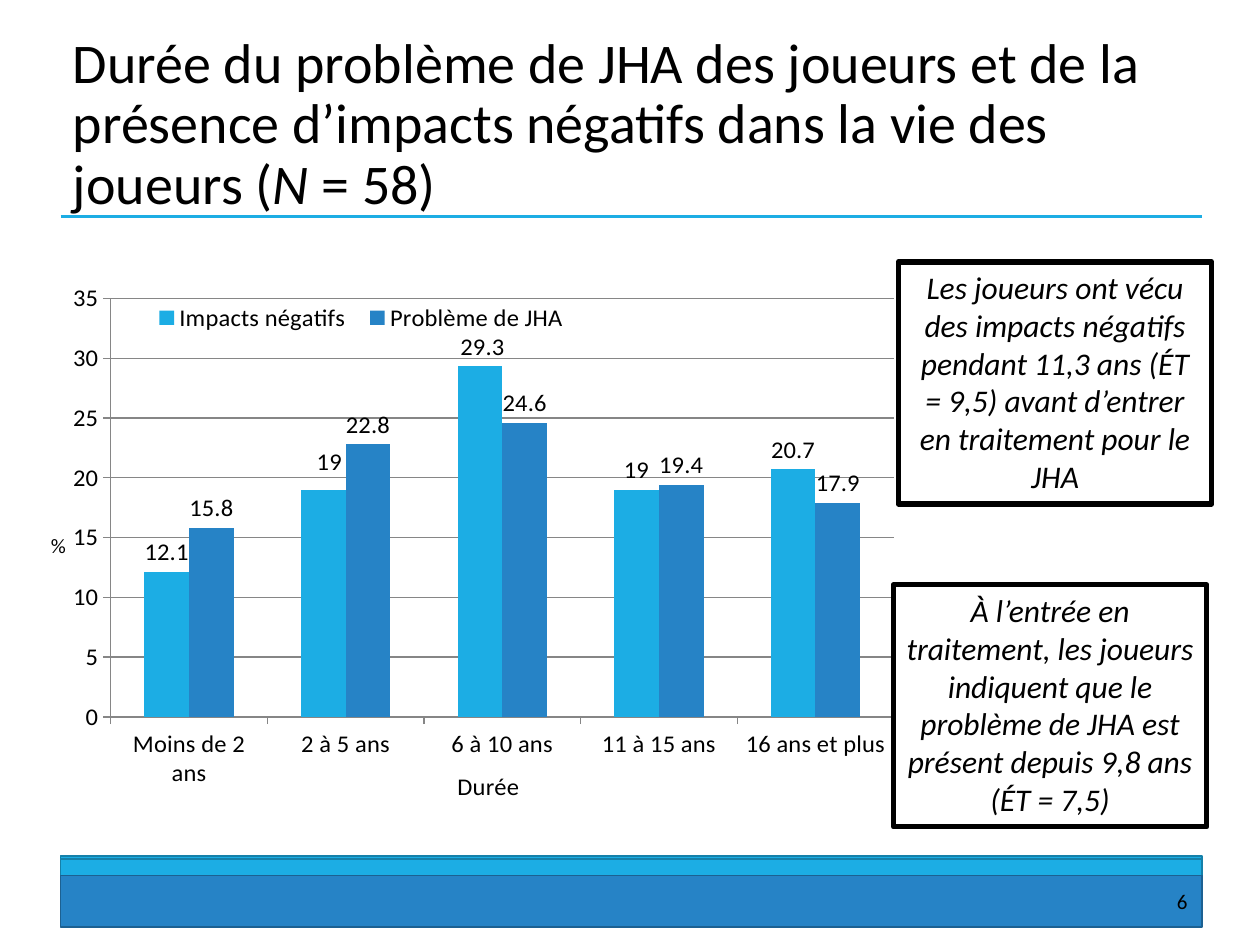
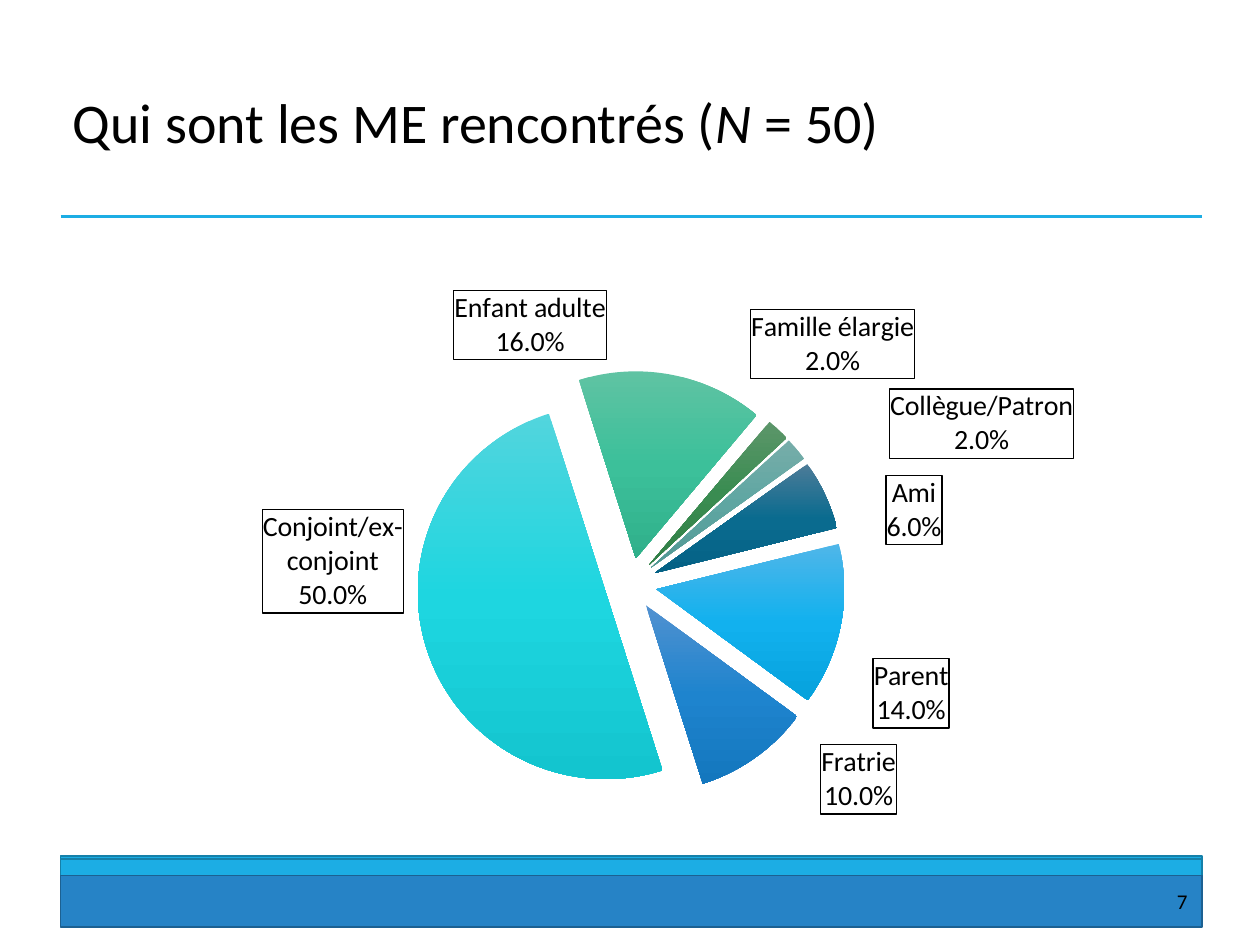
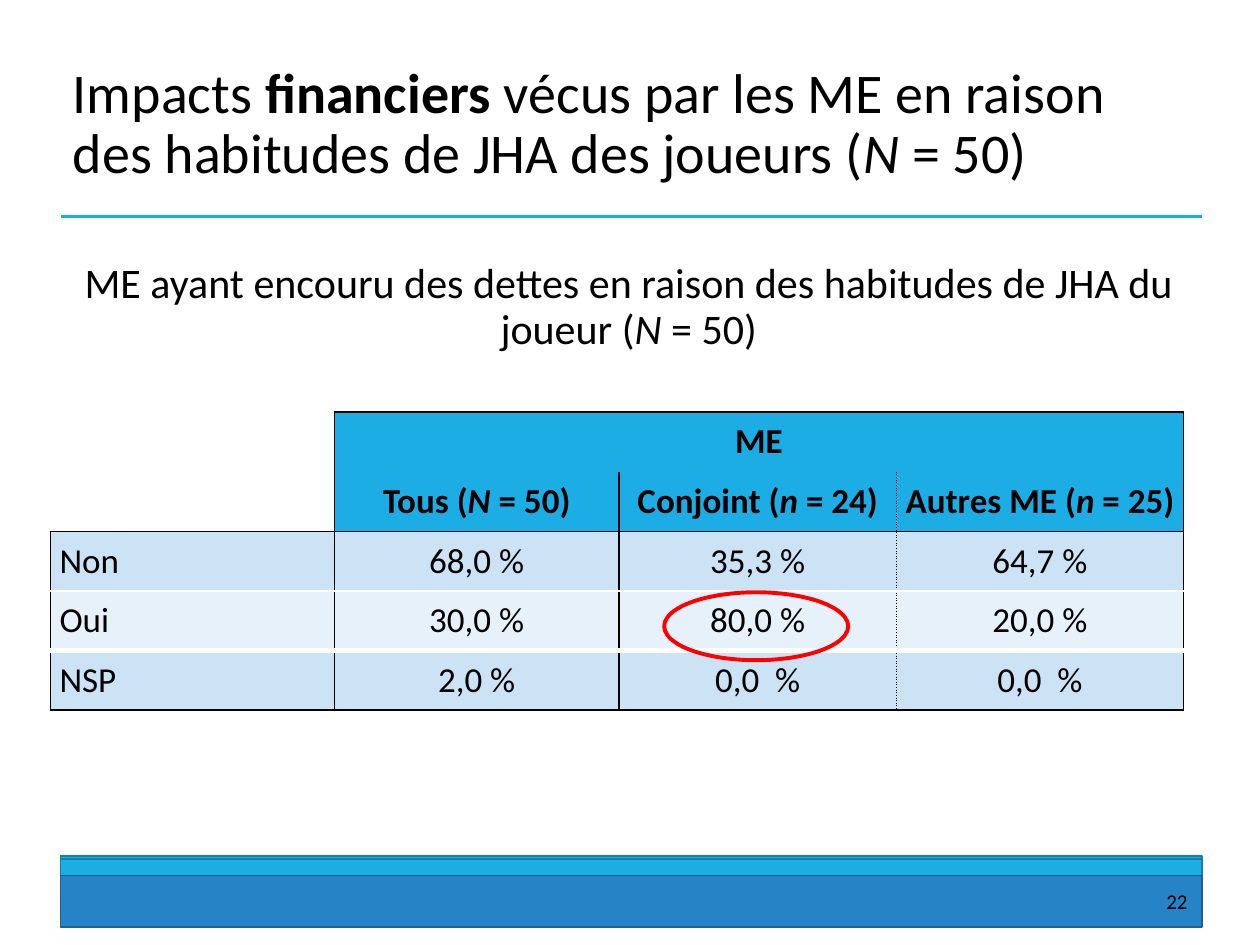
"""Build three slides on gambling problems: a column chart, a pie chart and a table."""
import copy

import pptx
import pptx.chart.data
import pptx.dml.color
import pptx.enum.chart
import pptx.enum.shapes
import pptx.enum.text
import pptx.oxml
import pptx.oxml.ns
import pptx.util

Cm = pptx.util.Cm
Pt = pptx.util.Pt
ALIGN = pptx.enum.text.PP_ALIGN
ANCHOR = pptx.enum.text.MSO_ANCHOR
PRESET = pptx.enum.shapes.MSO_SHAPE
CHART = pptx.enum.chart.XL_CHART_TYPE
FONT = "Calibri"

COLOURS = {
    "text": "000000", "white": "FFFFFF", "cyan": "1CADE4", "cyan edge": "1580A9",
    "blue": "2683C6", "blue edge": "1C6192", "grid": "868686",
    "odd row": "CCE3F5", "even row": "E7F1FA", "highlight": "FF0000",
}

MARGIN, WIDTH, RULE_Y = 1.22, 23.01, 4.37
BANDS = [
    (17.25, 0.33, "cyan"), (17.63, 1.04, "blue"),
    (17.32, 0.33, "cyan"), (17.65, 1.04, "blue"),
]

DURATION = {
    "number": 6,
    "title": [("Durée du problème de JHA des joueurs et de la présence d’impacts négatifs "
               "dans la vie des joueurs (", ""), ("N", "i"), (" = 58)", "")],
    "categories": ["Moins de 2 ans", "2 à 5 ans", "6 à 10 ans", "11 à 15 ans", "16 ans et plus"],
    "series": [
        ("Impacts négatifs", [12.1, 19, 29.3, 19, 20.7], "cyan"),
        ("Problème de JHA", [15.8, 22.8, 24.6, 19.4, 17.9], "blue"),
    ],
    "label shifts": {1: (0.007, -0.015), 2: (0.003, 0)},
    "callouts": [
        (18.11, 5.28, "Les joueurs ont vécu des impacts négatifs pendant 11,3 ans "
                      "(ÉT = 9,5) avant d’entrer en traitement pour le JHA"),
        (18.01, 11.79, "À l’entrée en traitement, les joueurs indiquent que le problème "
                       "de JHA est présent depuis 9,8 ans (ÉT = 7,5)"),
    ],
}

RELATIONS = {
    "number": 7,
    "title": [("Qui sont les ME rencontrés (", ""), ("N", "i"), (" = 50)", "")],
    "slices": [
        ("Parent", 14, ("4FB6E9", "12B1EE", "06A2DD"), (0.026, 0.056)),
        ("Fratrie", 10, ("5191D0", "1E84CE", "1477BE"), (0.063, -0.033)),
        ("Conjoint/ex-conjoint", 50, ("52D5DD", "1ED6E0", "13C5CF"), (-0.017, -0.248)),
        ("Enfant adulte", 16, ("5FC3A3", "3CC09A", "30B08B"), (-0.227, -0.014)),
        ("Famille élargie", 2, ("5C966A", "3A8C51", "317F47"), (-0.034, -0.08)),
        ("Collègue/Patron", 2, ("76ADA9", "5FA6A2", "519793"), (0.09, 0.024)),
        ("Ami", 6, ("4C7B98", "0A6B8F", "046185"), (0.056, 0.093)),
    ],
}

DEBTS = {
    "number": 22,
    "title": [("Impacts ", ""), ("financiers", "b"),
              (" vécus par les ME en raison des habitudes de JHA des joueurs (", ""),
              ("N", "i"), (" = 50)", "")],
    "subtitle": [("ME ayant encouru des dettes en raison des habitudes de JHA du joueur (", ""),
                 ("N", "i"), (" = 50)", "")],
    "columns": [5.72, 5.74, 5.59, 5.79],
    "rows": [
        ["", "ME", "", ""],
        ["", [("Tous (", "b"), ("N", "bi"), (" = 50)", "b")],
         [("Conjoint (", "b"), ("n", "bi"), (" = 24)", "b")],
         [("Autres ME (", "b"), ("n", "bi"), (" = 25)", "b")]],
        ["Non", "68,0 %", "35,3 %", "64,7 %"],
        ["Oui", "30,0 %", "80,0 %", "20,0 %"],
        ["NSP", "2,0 %", "0,0  %", "0,0  %"],
    ],
    "row fills": ["cyan", "cyan", "odd row", "even row", "odd row"],
    "vertical rules": [(2, "solid"), (0, "solid"), (1, "solid"), (1, "sysDot"), (0, "solid")],
    "horizontal rules": [(1, "text", 1), None, (0, "text", 1), (0, "white", 1),
                         (0, "white", 3), (0, "text", 1)],
}


def rgb(name):
    return pptx.dml.color.RGBColor.from_string(COLOURS[name])


def xml(tag, content="", attributes=""):
    namespaces = pptx.oxml.ns.nsdecls("a", "c")
    return pptx.oxml.parse_xml(f"<{tag} {namespaces} {attributes}>{content}</{tag}>")


def style_font(font, size, style=""):
    font.name, font.size = FONT, Pt(size)
    font.color.rgb = rgb("text")
    font.bold, font.italic = "b" in style, "i" in style


def write(frame, text, size=18, style="", align=ALIGN.LEFT, anchor=ANCHOR.TOP, spacing=None):
    frame.word_wrap = True
    frame.vertical_anchor = anchor
    paragraph = frame.paragraphs[0]
    paragraph.alignment, paragraph.line_spacing = align, spacing
    for words, run_style in [(text, style)] if isinstance(text, str) else text:
        run = paragraph.add_run()
        run.text = words
        style_font(run.font, size, run_style)


def add_text(slide, text, box, **formatting):
    write(slide.shapes.add_textbox(*map(Cm, box)).text_frame, text, **formatting)


def add_outline(slide, preset, box, line, width, fill=None):
    shape = slide.shapes.add_shape(preset, *map(Cm, box))
    shape.shadow.inherit = False
    if fill:
        shape.fill.solid()
        shape.fill.fore_color.rgb = rgb(fill)
    else:
        shape.fill.background()
    shape.line.color.rgb, shape.line.width = rgb(line), Pt(width)
    return shape


def start_slide(deck, content):
    slide = deck.slides.add_slide(deck.slide_layouts[6])
    for top, height, colour in BANDS:
        add_outline(slide, PRESET.RECTANGLE, (MARGIN, top, WIDTH, height),
                    f"{colour} edge", 1, colour)
    rule = slide.shapes.add_connector(
        pptx.enum.shapes.MSO_CONNECTOR.STRAIGHT,
        *map(Cm, (MARGIN, RULE_Y, MARGIN + WIDTH, RULE_Y)))
    rule.line.color.rgb, rule.line.width = rgb("cyan"), Pt(1.5)
    rule._element.spPr.append(xml("a:effectLst"))
    add_text(slide, content["title"], (MARGIN, 0.69, WIDTH, 3.68),
             size=32, anchor=ANCHOR.MIDDLE, spacing=0.9)
    add_text(slide, str(content["number"]), (18.47, 17.65, 5.72, 1.02),
             size=12, align=ALIGN.RIGHT, anchor=ANCHOR.MIDDLE)
    return slide


def layout_xml(target="", **places):
    parts = [f'<c:layoutTarget val="{target}"/>'] if target else []
    if target or "w" in places:
        parts += ['<c:xMode val="edge"/><c:yMode val="edge"/>']
    parts += [f'<c:{key} val="{value}"/>' for key, value in places.items()]
    return xml("c:layout", f"<c:manualLayout>{''.join(parts)}</c:manualLayout>")


def place(part, layout):
    for old in part.xpath("c:layout"):
        part.remove(old)
    overlay = part.xpath("c:overlay")
    if overlay:
        overlay[0].addprevious(layout)
    else:
        part.insert(0, layout)


def place_plot(chart, x, y, w, h):
    place(chart._chartSpace.xpath("c:chart/c:plotArea")[0],
          layout_xml("inner", x=x, y=y, w=w, h=h))


def shift_labels(labels, shifts):
    group = labels._element
    for leader in group.xpath("c:showLeaderLines"):
        leader.set("val", "0")
    shared = [part for part in group if not part.tag.endswith("showLeaderLines")]
    for position, (index, (x, y)) in enumerate(shifts.items()):
        label = xml("c:dLbl", f'<c:idx val="{index}"/>')
        label.append(layout_xml(x=x, y=y))
        label.extend(copy.deepcopy(part) for part in shared)
        group.insert(position, label)


def add_chart(slide, kind, box, categories, series):
    data = pptx.chart.data.CategoryChartData()
    data.categories = categories
    for name, values in series:
        data.add_series(name, values)
    chart = slide.shapes.add_chart(kind, *map(Cm, box), data).chart
    chart.has_title = False
    style_font(chart.font, 10)
    return chart


def title_axis(axis, text, size, x, y):
    style_font(axis.tick_labels.font, 14)
    axis.format.line.color.rgb = rgb("grid")
    write(axis.axis_title.text_frame, text, size=size)
    title = axis.axis_title._element
    title.xpath(".//a:bodyPr")[0].set("rot", "0")
    layout = layout_xml(x=x, y=y)
    layout[0].insert(0, xml("c:xMode", attributes='val="edge"'))
    layout[0].insert(1, xml("c:yMode", attributes='val="edge"'))
    place(title, layout)


def build_duration(deck):
    slide = start_slide(deck, DURATION)
    chart = add_chart(slide, CHART.COLUMN_CLUSTERED, (0.86, 5.51, 17.6, 10.8),
                      DURATION["categories"], [entry[:2] for entry in DURATION["series"]])
    plot = chart.plots[0]
    plot.gap_width, plot.overlap, plot.vary_by_categories = 150, 0, False
    place_plot(chart, 0.078, 0.048, 0.897, 0.8)
    title_axis(chart.category_axis, "Durée", 14, 0.47, 0.94)
    percent = chart.value_axis
    title_axis(percent, "%", 12, 0.005, 0.486)
    percent.minimum_scale, percent.maximum_scale, percent.major_unit = 0, 35, 5
    percent.tick_labels.number_format = "#,##0"
    percent.tick_labels.number_format_is_linked = False
    percent.major_gridlines.format.line.color.rgb = rgb("grid")
    chart.has_legend = True
    chart.legend.position = pptx.enum.chart.XL_LEGEND_POSITION.BOTTOM
    chart.legend.include_in_layout = False
    style_font(chart.legend.font, 14)
    place(chart.legend._element, layout_xml(x=0.115, y=0.055, w=0.5, h=0.06))
    for series, (_, _, colour) in zip(plot.series, DURATION["series"]):
        series.format.fill.solid()
        series.format.fill.fore_color.rgb = rgb(colour)
        series.data_labels.show_value = True
        series.data_labels.position = pptx.enum.chart.XL_LABEL_POSITION.OUTSIDE_END
        style_font(series.data_labels.font, 14)
    shift_labels(plot.series[0].data_labels, DURATION["label shifts"])
    for left, top, text in DURATION["callouts"]:
        callout = add_outline(slide, PRESET.RECTANGLE, (left, top, 6.32, 4.88), "text", 3)
        write(callout.text_frame, text, style="i", align=ALIGN.CENTER)


def build_relations(deck):
    slide = start_slide(deck, RELATIONS)
    names, shares, gradients, shifts = zip(*RELATIONS["slices"])
    chart = add_chart(slide, CHART.PIE, (2.97, 5.26, 19.53, 11.53), names, [("Series 1", shares)])
    chart.has_legend = False
    place_plot(chart, 0.278, 0.143, 0.442, 0.849)
    pie = chart.plots[0]
    pie._element.append(xml("c:firstSliceAng", attributes='val="76"'))
    series = pie.series[0]
    for index, gradient in enumerate(gradients):
        fill = series.points[index].format.fill
        fill.gradient()
        fill.gradient_angle = 270
        stops = series._element.xpath(f'c:dPt[c:idx/@val="{index}"]//a:gsLst')[0]
        stops[:] = [xml("a:gs", f'<a:srgbClr val="{colour}"/>', f'pos="{step * 50000}"')
                    for step, colour in enumerate(gradient)]
    series._element.xpath("c:tx")[0].addnext(xml("c:explosion", attributes='val="14"'))
    labels = series.data_labels
    labels.show_value = False
    labels.show_category_name = labels.show_percentage = True
    labels.number_format, labels.number_format_is_linked = "0.0%", False
    labels.position = pptx.enum.chart.XL_LABEL_POSITION.OUTSIDE_END
    style_font(labels.font, 16)
    frame = (f'<a:noFill/><a:ln w="9525"><a:solidFill><a:srgbClr val="{COLOURS["text"]}"/>'
             '</a:solidFill></a:ln>')
    labels._element.xpath("c:numFmt")[0].addnext(xml("c:spPr", frame))
    separator = xml("c:separator")
    separator.text = "\n"
    labels._element.xpath("c:showBubbleSize")[0].addnext(separator)
    shift_labels(labels, dict(enumerate(shifts)))


def vertical_rule(edge, row):
    first_row, dash = DEBTS["vertical rules"][edge]
    return ("text", 1, dash) if row >= first_row else None


def horizontal_rule(edge, column):
    rule = DEBTS["horizontal rules"][edge]
    return (*rule[1:], "solid") if rule and column >= rule[0] else None


def border_cell(cell, row, column):
    right = len(DEBTS["columns"]) if cell.is_merge_origin else column + 1
    rules = {"L": vertical_rule(column, row), "R": vertical_rule(right, row),
             "T": horizontal_rule(row, column), "B": horizontal_rule(row + 1, column)}
    for position, (side, rule) in enumerate(rules.items()):
        content, attributes = "<a:noFill/>", ""
        if rule:
            colour, width, dash = rule
            content = (f'<a:solidFill><a:srgbClr val="{COLOURS[colour]}"/></a:solidFill>'
                       f'<a:prstDash val="{dash}"/>')
            attributes = f'w="{Pt(width)}"'
        cell._tc.get_or_add_tcPr().insert(position, xml(f"a:ln{side}", content, attributes))


def build_debts(deck):
    slide = start_slide(deck, DEBTS)
    widths, rows = DEBTS["columns"], DEBTS["rows"]
    table = slide.shapes.add_table(len(rows), len(widths), Cm(1.02), Cm(8.31),
                                   Cm(sum(widths)), Cm(1.2 * len(rows))).table
    for column, width in zip(table.columns, widths):
        column.width = Cm(width)
    table.cell(0, 1).merge(table.cell(0, len(widths) - 1))
    for row, texts in enumerate(rows):
        for column, text in enumerate(texts):
            cell = table.cell(row, column)
            cell.margin_left = cell.margin_right = Cm(0.18)
            cell.margin_top = cell.margin_bottom = 0
            cell.vertical_anchor = ANCHOR.MIDDLE
            if row < 2 and column == 0:
                cell.fill.background()
            else:
                cell.fill.solid()
                cell.fill.fore_color.rgb = rgb(DEBTS["row fills"][row])
            if text:
                write(cell.text_frame, text, size=20, style="b" if row == 0 else "",
                      align=ALIGN.CENTER if column else ALIGN.JUSTIFY, anchor=ANCHOR.MIDDLE)
            border_cell(cell, row, column)
    add_text(slide, DEBTS["subtitle"], (1.17, 4.37, WIDTH, 3.68),
             size=24, align=ALIGN.CENTER, anchor=ANCHOR.MIDDLE, spacing=0.9)
    add_outline(slide, PRESET.OVAL, (13.39, 11.94, 3.71, 1.37), "highlight", 2.25)


def main():
    deck = pptx.Presentation()
    deck.slide_width, deck.slide_height = Cm(25.4), Cm(19.05)
    build_duration(deck)
    build_relations(deck)
    build_debts(deck)
    deck.save("out.pptx")


if __name__ == "__main__":
    main()
